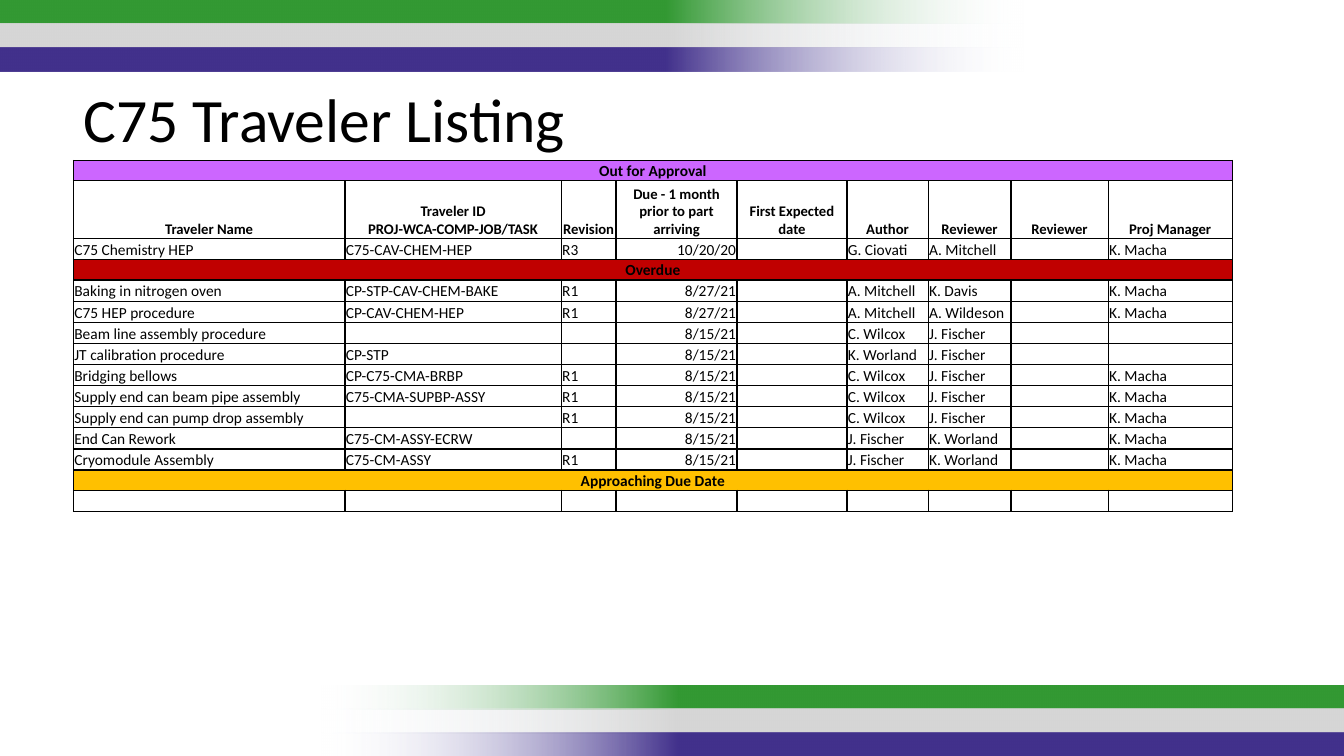
import pptx
import pptx.dml.color
import pptx.enum.shapes
import pptx.enum.text
import pptx.oxml.ns
import pptx.util
from lxml import etree

Pt = pptx.util.Pt
qn = pptx.oxml.ns.qn
ALIGN = pptx.enum.text.PP_ALIGN
ANCHOR = pptx.enum.text.MSO_ANCHOR

COLOURS = {
    "text": "000000", "border": "000000", "fade": "F7FAFD",
    "green": "339933", "grey": "D6D6D6", "purple": "42318C",
    "approval": "CC66FF", "overdue": "C00000", "approaching": "FFC000",
}
FONT = "Calibri"
TITLE = "C75 Traveler Listing"
HEADINGS = (
    "Traveler Name", "Traveler ID\nPROJ-WCA-COMP-JOB/TASK", "Revision",
    "Due - 1 month prior to part arriving", "First Expected date",
    "Author", "Reviewer", "Reviewer", "Proj Manager",
)
# name, ID, revision, due, expected, author, reviewer, reviewer, manager
APPROVAL = [
    ("C75 Chemistry HEP", "C75-CAV-CHEM-HEP", "R3", "10/20/20", "", "G. Ciovati", "A. Mitchell", "", "K. Macha"),
]
OVERDUE = [
    ("Baking in nitrogen oven", "CP-STP-CAV-CHEM-BAKE", "R1", "8/27/21", "", "A. Mitchell", "K. Davis", "", "K. Macha"),
    ("C75 HEP procedure", "CP-CAV-CHEM-HEP", "R1", "8/27/21", "", "A. Mitchell", "A. Wildeson", "", "K. Macha"),
    ("Beam line assembly procedure", "", "", "8/15/21", "", "C. Wilcox", "J. Fischer", "", ""),
    ("JT calibration procedure", "CP-STP", "", "8/15/21", "", "K. Worland", "J. Fischer", "", ""),
    ("Bridging bellows", "CP-C75-CMA-BRBP", "R1", "8/15/21", "", "C. Wilcox", "J. Fischer", "", "K. Macha"),
    ("Supply end can beam pipe assembly", "C75-CMA-SUPBP-ASSY", "R1", "8/15/21", "", "C. Wilcox", "J. Fischer", "", "K. Macha"),
    ("Supply end can pump drop assembly", "", "R1", "8/15/21", "", "C. Wilcox", "J. Fischer", "", "K. Macha"),
    ("End Can Rework", "C75-CM-ASSY-ECRW", "", "8/15/21", "", "J. Fischer", "K. Worland", "", "K. Macha"),
    ("Cryomodule Assembly", "C75-CM-ASSY", "R1", "8/15/21", "", "J. Fischer", "K. Worland", "", "K. Macha"),
]
BLANK = ("",) * len(HEADINGS)

# (kind, cell texts, section colour)
ROWS = [
    ("section", ("Out for Approval",), "approval"),
    ("heading", HEADINGS, None),
    *[("traveler", traveler, None) for traveler in APPROVAL],
    ("section", ("Overdue",), "overdue"),
    *[("traveler", traveler, None) for traveler in OVERDUE],
    ("section", ("Approaching Due Date",), "approaching"),
    ("traveler", BLANK, None),
]
ROW_HEIGHTS = {"section": 14.5, "heading": 41.3, "traveler": 15.1}
COLUMN_WIDTHS = (194, 154.5, 39.2, 86.4, 78.5, 58, 59.2, 69.4, 88.8)
DUE_COLUMN = 3
TEXT_FORMATS = {
    "section": {"size": Pt(11), "bold": True, "name": FONT},
    "heading": {"size": Pt(10.5), "bold": True, "name": FONT},
    "traveler": {"size": Pt(11), "bold": False, "name": FONT},
    "title": {"size": Pt(44), "name": FONT},
}
CELL_FORMAT = {
    "margin_left": Pt(0.7), "margin_right": Pt(0.7),
    "margin_top": Pt(0.7), "margin_bottom": 0,
    "vertical_anchor": ANCHOR.BOTTOM,
}
STRIPE_WIDTH, STRIPE_HEIGHT, STRIPE_STEP = 732, 17.1, 16.9
# left, top, rotation of each group of stripes
STRIPE_GROUPS = [(-1, 0, 180), (228.6, 489.6, 0)]


def rgb(name):
    return pptx.dml.color.RGBColor.from_string(COLOURS[name])


def apply_format(target, values):
    for key, value in values.items():
        setattr(target, key, value)


def write(paragraph, text, kind, alignment):
    paragraph.text = text
    paragraph.alignment = alignment
    for run in paragraph.runs:
        apply_format(run.font, TEXT_FORMATS[kind])
        run.font.color.rgb = rgb("text")
    if not text:
        size = TEXT_FORMATS[kind]["size"].centipoints
        etree.SubElement(paragraph._p, qn("a:endParaRPr"), sz=str(size))


def add_stripe(slide, left, top, rotation, colour):
    """Add a bar that fades from clear to its colour over a third of its width."""
    stripe = slide.shapes.add_shape(
        pptx.enum.shapes.MSO_SHAPE.RECTANGLE,
        Pt(left), Pt(top), Pt(STRIPE_WIDTH), Pt(STRIPE_HEIGHT))
    stripe.shadow.inherit = False
    stripe.rotation = rotation
    stripe.line.fill.background()
    stripe.fill.gradient()
    stripe.fill.gradient_angle = 0
    stops = stripe._element.spPr.find(".//" + qn("a:gsLst"))
    for stop in list(stops):
        stops.remove(stop)
    for percent, name in ((0, "fade"), (35, colour), (100, colour)):
        stop = etree.SubElement(stops, qn("a:gs"), pos=str(percent * 1000))
        shade = etree.SubElement(stop, qn("a:srgbClr"), val=COLOURS[name])
        if name == "fade":
            etree.SubElement(shade, qn("a:alpha"), val="0")


def add_borders(cell):
    properties = cell._tc.get_or_add_tcPr()
    for position, side in enumerate(("lnL", "lnR", "lnT", "lnB")):
        border = etree.Element(qn("a:" + side), w=str(Pt(1)))
        fill = etree.SubElement(border, qn("a:solidFill"))
        etree.SubElement(fill, qn("a:srgbClr"), val=COLOURS["border"])
        properties.insert(position, border)


def add_title(slide):
    box = slide.shapes.add_textbox(Pt(52.6), Pt(54), Pt(742.3), Pt(60.5))
    box.text_frame.word_wrap = True
    write(box.text_frame.paragraphs[0], TITLE, "title", ALIGN.LEFT)


def add_listing(slide):
    heights = [ROW_HEIGHTS[kind] for kind, texts, colour in ROWS]
    listing = slide.shapes.add_table(
        len(ROWS), len(HEADINGS), Pt(52.4), Pt(114.7),
        Pt(sum(COLUMN_WIDTHS)), Pt(sum(heights))).table
    listing.first_row = listing.horz_banding = False
    for column, width in zip(listing.columns, COLUMN_WIDTHS):
        column.width = Pt(width)
    for r, (kind, texts, colour) in enumerate(ROWS):
        listing.rows[r].height = Pt(heights[r])
        if kind == "section":
            listing.cell(r, 0).merge(listing.cell(r, len(HEADINGS) - 1))
        for c in range(len(HEADINGS)):
            cell = listing.cell(r, c)
            apply_format(cell, CELL_FORMAT)
            if colour:
                cell.fill.solid()
                cell.fill.fore_color.rgb = rgb(colour)
            else:
                cell.fill.background()
            add_borders(cell)
            if kind != "traveler":
                alignment = ALIGN.CENTER
            else:
                alignment = ALIGN.RIGHT if c == DUE_COLUMN else ALIGN.LEFT
            text = texts[c] if c < len(texts) else ""
            write(cell.text_frame.paragraphs[0], text, kind, alignment)
            if colour == "overdue":
                cell.vertical_anchor = ANCHOR.MIDDLE


def main():
    deck = pptx.Presentation()
    deck.slide_width, deck.slide_height = Pt(960), Pt(540)
    slide = deck.slides.add_slide(deck.slide_layouts[6])
    for left, top, rotation in STRIPE_GROUPS:
        for i, colour in enumerate(("green", "grey", "purple")):
            add_stripe(slide, left, top + i * STRIPE_STEP, rotation, colour)
    add_listing(slide)
    add_title(slide)
    deck.save("out.pptx")


if __name__ == "__main__":
    main()
